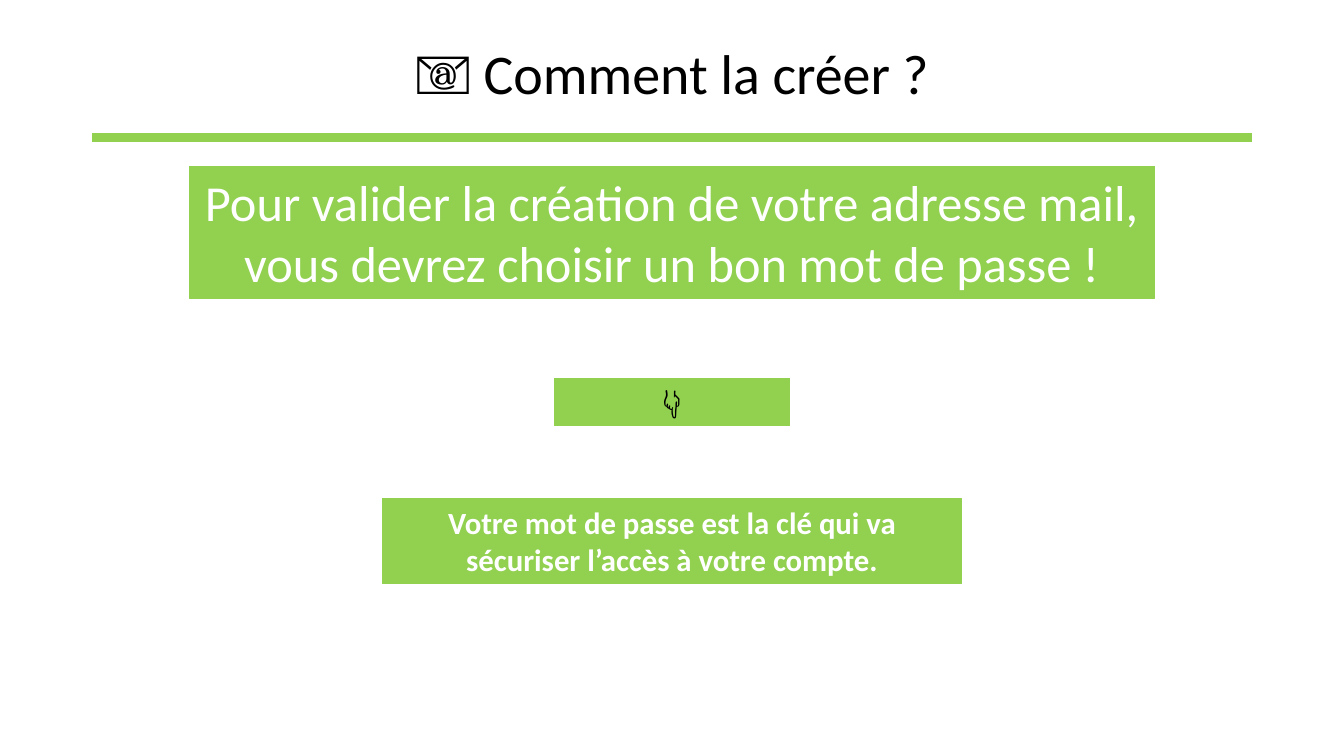
from dataclasses import dataclass

from lxml import etree
from pptx import Presentation
from pptx import util as u
from pptx.dml.color import RGBColor
from pptx.enum import shapes, text
from pptx.oxml import ns


@dataclass(frozen=True)
class Theme:
    font: str = "Calibri"
    green: RGBColor = RGBColor(0x92, 0xD0, 0x50)
    black: RGBColor = RGBColor(0, 0, 0)
    white: RGBColor = RGBColor(255, 255, 255)
    title_size: int = 40
    lead_size: int = 36
    note_size: int = 22


THEME = Theme()
SLIDE_WIDTH, SLIDE_HEIGHT = 33.87, 19.05


def write_text(shape, words, size, color, bold=False):
    """Fill a shape with one centred paragraph."""
    frame = shape.text_frame
    frame.word_wrap = True
    paragraph = frame.paragraphs[0]
    paragraph.text = words
    paragraph.alignment = text.PP_ALIGN.CENTER
    font = paragraph.font
    font.name, font.size, font.bold = THEME.font, u.Pt(size), bold
    font.color.rgb = color
    return paragraph


def add_header(slide, left, top, width, height, words):
    """Title with a thick rule just above the bottom of its box."""
    rule_y = u.Cm(top + height - 0.3)
    rule = slide.shapes.add_connector(
        shapes.MSO_CONNECTOR.STRAIGHT, u.Cm(left), rule_y, u.Cm(left + width), rule_y)
    rule.line.color.rgb = THEME.green
    rule.line.width = u.Pt(6)
    etree.SubElement(rule._element.spPr, ns.qn("a:effectLst"))

    title = slide.shapes.add_textbox(u.Cm(left), u.Cm(top), u.Cm(width), u.Cm(height))
    paragraph = write_text(title, words, THEME.title_size, THEME.black)
    paragraph.line_spacing = 0.9
    title.text_frame.vertical_anchor = text.MSO_ANCHOR.MIDDLE


def add_banner(slide, top, width, height, words, size, color, bold):
    """Green box centred across the slide."""
    left = (SLIDE_WIDTH - width) / 2
    banner = slide.shapes.add_shape(
        shapes.MSO_SHAPE.RECTANGLE, u.Cm(left), u.Cm(top), u.Cm(width), u.Cm(height))
    banner.shadow.inherit = False
    banner.fill.solid()
    banner.fill.fore_color.rgb = THEME.green
    banner.line.color.rgb = THEME.green
    banner.line.width = u.Pt(0.75)
    write_text(banner, words, size, color, bold)
    banner.text_frame.vertical_anchor = text.MSO_ANCHOR.TOP
    banner.text_frame.auto_size = text.MSO_AUTO_SIZE.SHAPE_TO_FIT_TEXT


def build_password_slide(presentation):
    slide = presentation.slides.add_slide(presentation.slide_layouts[6])
    add_header(slide, 2.33, 0.08, 29.21, 3.68, "📧 Comment la créer ?")

    # Message, pointing hand, explanation: top, width, height, words, style
    banners = [
        (4.19, 24.33, 3.33,
         "Pour valider la création de votre adresse mail, "
         "vous devrez choisir un bon mot de passe !",
         THEME.lead_size, THEME.white, False),
        (9.53, 5.94, 1.19, "👇", THEME.note_size, THEME.black, True),
        (12.57, 14.6, 2.13,
         "Votre mot de passe est la clé qui va sécuriser l’accès à votre compte.",
         THEME.note_size, THEME.white, True),
    ]
    for banner in banners:
        add_banner(slide, *banner)


def main():
    presentation = Presentation()
    presentation.slide_width = u.Cm(SLIDE_WIDTH)
    presentation.slide_height = u.Cm(SLIDE_HEIGHT)
    build_password_slide(presentation)
    presentation.save("out.pptx")


if __name__ == "__main__":
    main()
